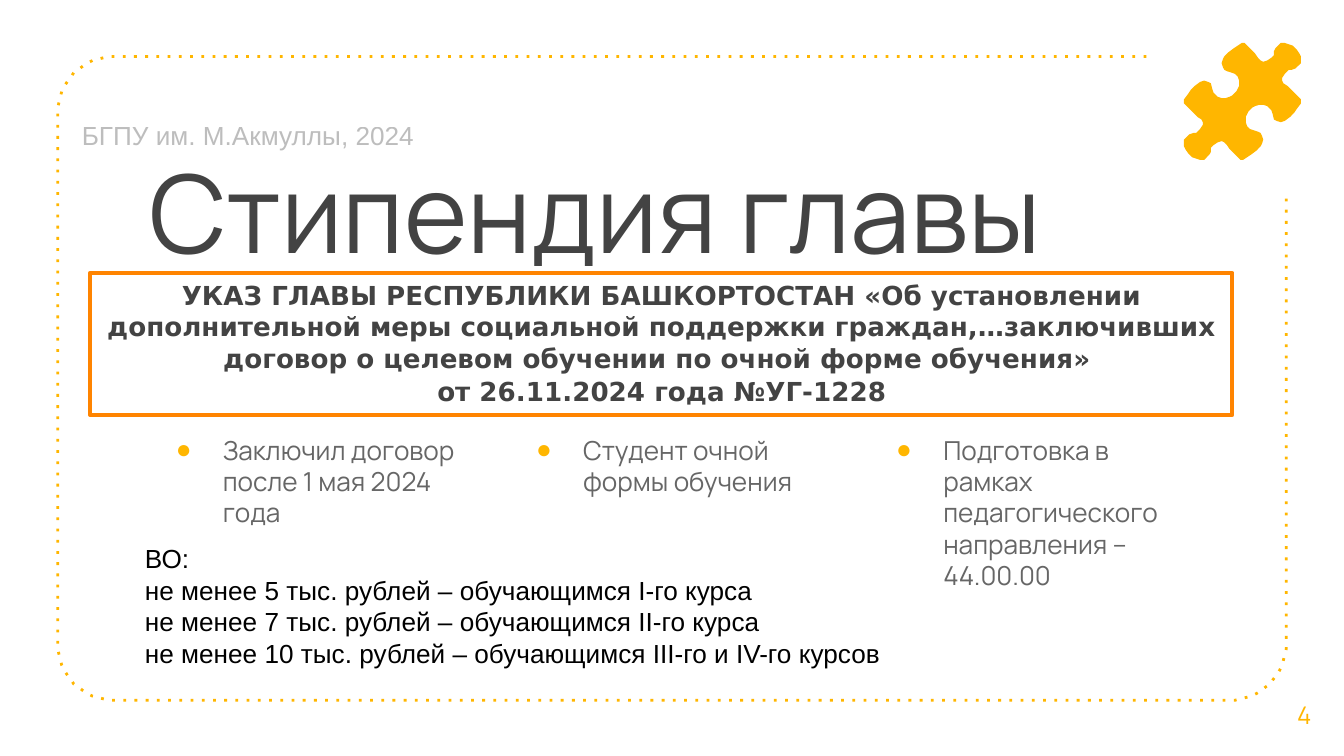
import math
from dataclasses import dataclass
from typing import Optional

import pptx
import pptx.dml.color
import pptx.enum.shapes
import pptx.enum.text
import pptx.oxml
import pptx.oxml.ns
import pptx.util

PX = 9144  # EMU in one px, 100 px to the inch
SLIDE_WIDTH = 1000 * PX
SLIDE_HEIGHT = SLIDE_WIDTH * 9 // 16
COLORS = {
    "amber": "FFB600",
    "orange": "FF8400",
    "dark": "434343",
    "grey": "666666",
    "black": "000000",
    "white": "FFFFFF",
}
ALIGN = pptx.enum.text.PP_ALIGN
ANCHOR = pptx.enum.text.MSO_ANCHOR
AUTO_SIZE = pptx.enum.text.MSO_AUTO_SIZE


@dataclass(frozen=True)
class Box:
    left: int
    top: int
    width: int
    height: int

    def emu(self) -> tuple:
        return tuple(side * PX for side in (self.left, self.top, self.width, self.height))


@dataclass(frozen=True)
class Style:
    font: str
    size: int
    color: str
    bold: bool = False
    align: ALIGN = ALIGN.LEFT
    anchor: ANCHOR = ANCHOR.TOP
    inset: int = 5
    wrap: bool = True
    space_before: float = 0
    indent: tuple = (0, 0)
    bullet: Optional[str] = None
    alpha: Optional[int] = None


TITLE = Style("Manrope", 58, "dark", inset=10)
NUMBER = Style("Manrope", 13, "amber", align=ALIGN.CENTER, anchor=ANCHOR.MIDDLE, inset=10)
SOURCE = Style("Arial", 14, "dark", wrap=False, alpha=34)
CONDITION = Style("Manrope", 14, "grey", inset=10, space_before=6, indent=(50, -35), bullet="●")
PAYMENT = Style("Arial", 14, "black")
DECREE = Style("DejaVu Sans", 14, "dark", bold=True, align=ALIGN.CENTER,
               space_before=0.9, indent=(1, 0))

CONDITIONS = [
    "Заключил договор после 1 мая 2024 года",
    "Студент очной формы обучения",
    "Подготовка в рамках педагогического направления – 44.00.00",
]
PAYMENTS = ["ВО:"] + [
    f"не менее {amount} тыс. рублей – обучающимся {years}"
    for amount, years in [(5, "I-го курса"), (7, "II-го курса"), (10, "III-го и IV-го курсов")]
]
DECREE_LINES = [
    "УКАЗ ГЛАВЫ РЕСПУБЛИКИ БАШКОРТОСТАН «Об установлении дополнительной меры "
    "социальной поддержки граждан,…заключивших договор о целевом обучении "
    "по очной форме обучения» ",
    "от 26.11.2024 года №УГ-1228",
]

# Upper-left half of the puzzle piece; the other half is its half-turn.
PUZZLE_HALF = [
    (924, 32), (921, 34), (918, 36), (914, 39), (911, 42), (910, 44), (909, 47), (910, 50),
    (911, 52), (913, 53), (916, 54), (919, 55), (921, 57), (922, 60), (922, 64), (920, 68),
    (917, 71), (915, 72), (912, 73), (909, 73), (906, 72), (903, 69), (902, 66), (901, 62),
    (899, 61), (896, 60), (893, 61), (889, 64), (886, 67), (884, 70), (881, 74), (881, 77),
    (883, 79), (886, 82), (891, 87), (894, 89), (895, 91), (895, 93), (893, 96), (890, 99),
    (888, 99), (885, 100), (883, 102), (881, 104), (881, 109), (882, 111), (884, 114),
    (887, 117), (890, 118), (893, 119), (896, 119), (898, 117), (900, 115), (901, 113),
    (901, 110), (903, 108), (906, 106), (909, 105), (911, 106), (913, 108), (915, 111),
    (918, 114), (921, 117), (923, 119),
]


def color(name: str) -> pptx.dml.color.RGBColor:
    return pptx.dml.color.RGBColor.from_string(COLORS[name])


def add_xml_child(parent, tag: str, **attributes: str):
    child = pptx.oxml.parse_xml(f"<a:{tag} {pptx.oxml.ns.nsdecls('a')}/>")
    for name, value in attributes.items():
        child.set(name, value)
    parent.append(child)
    return child


def write(shape, lines: list, style: Style) -> None:
    frame = shape.text_frame
    frame.word_wrap = style.wrap
    frame.auto_size = AUTO_SIZE.NONE
    frame.vertical_anchor = style.anchor
    frame.margin_left = frame.margin_right = 10 * PX
    frame.margin_top = frame.margin_bottom = style.inset * PX
    for index, line in enumerate(lines):
        paragraph = frame.paragraphs[0] if index == 0 else frame.add_paragraph()
        paragraph.alignment = style.align
        paragraph.space_before = pptx.util.Pt(style.space_before)
        properties = paragraph._p.get_or_add_pPr()
        margin, first = style.indent
        properties.set("marL", str(margin * PX))
        properties.set("indent", str(first * PX))
        if style.bullet:
            bullet_color = add_xml_child(properties, "buClr")
            add_xml_child(bullet_color, "srgbClr", val=COLORS["amber"])
            add_xml_child(properties, "buFont", typeface="Arial")
            add_xml_child(properties, "buChar", char=style.bullet)
        run = paragraph.add_run()
        run.text = line
        run.font.name = style.font
        run.font.size = pptx.util.Pt(style.size)
        run.font.bold = style.bold
        run.font.color.rgb = color(style.color)
        if style.alpha:
            shade = run._r.rPr.find(".//" + pptx.oxml.ns.qn("a:srgbClr"))
            add_xml_child(shade, "alpha", val=str(style.alpha * 1000))


def add_text(slide, box: Box, lines: list, style: Style) -> None:
    write(slide.shapes.add_textbox(*box.emu()), lines, style)


def add_outline(slide, points: list, close: bool):
    builder = slide.shapes.build_freeform(*points[0], scale=PX)
    builder.add_line_segments(points[1:], close=close)
    outline = builder.convert_to_shape()
    outline.shadow.inherit = False
    return outline


def corner(center_x: int, center_y: int, start: int, radius: int = 42, steps: int = 16) -> list:
    """Points of a quarter circle, drawn anticlockwise from the start angle."""
    angles = [math.radians(start + 90 * step / steps) for step in range(steps + 1)]
    return [(center_x + radius * math.cos(a), center_y - radius * math.sin(a)) for a in angles]


def add_frame(slide) -> None:
    points = [(853, 42), *corner(85, 84, 90), *corner(85, 479, 180),
              *corner(915, 479, 270), (957, 146)]
    border = add_outline(slide, points, close=False)
    border.fill.background()
    border.line.color.rgb = color("amber")
    border.line.width = pptx.util.Pt(1.5)
    add_xml_child(border._element.spPr.get_or_add_ln(), "prstDash", val="dot")


def add_puzzle(slide) -> None:
    turned = [(1849 - x, 151 - y) for x, y in PUZZLE_HALF]
    piece = add_outline(slide, PUZZLE_HALF + turned, close=True)
    piece.fill.solid()
    piece.fill.fore_color.rgb = color("amber")
    piece.line.fill.background()


def add_decree(slide) -> None:
    panel = slide.shapes.add_shape(
        pptx.enum.shapes.MSO_SHAPE.RECTANGLE, *Box(67, 203, 850, 106).emu())
    panel.shadow.inherit = False
    panel.fill.solid()
    panel.fill.fore_color.rgb = color("white")
    panel.line.color.rgb = color("orange")
    panel.line.width = pptx.util.Pt(2)
    write(panel, DECREE_LINES, DECREE)


def main() -> None:
    deck = pptx.Presentation()
    deck.slide_width, deck.slide_height = SLIDE_WIDTH, SLIDE_HEIGHT
    slide = deck.slides.add_slide(deck.slide_layouts[5])

    add_frame(slide)
    title = slide.shapes.title
    title.left, title.top, title.width, title.height = Box(101, 98, 751, 94).emu()
    write(title, ["Стипендия главы"], TITLE)
    add_text(slide, Box(941, 502, 59, 60), ["4"], NUMBER)
    add_puzzle(slide)
    add_text(slide, Box(51, 84, 269, 34), ["БГПУ им. М.Акмуллы, 2024"], SOURCE)
    for column, condition in enumerate(CONDITIONS):
        add_text(slide, Box(106 + 268 * column, 313, 255, 319), [condition], CONDITION)
    add_text(slide, Box(98, 399, 811, 104), PAYMENTS, PAYMENT)
    add_decree(slide)
    deck.save("out.pptx")


if __name__ == "__main__":
    main()
